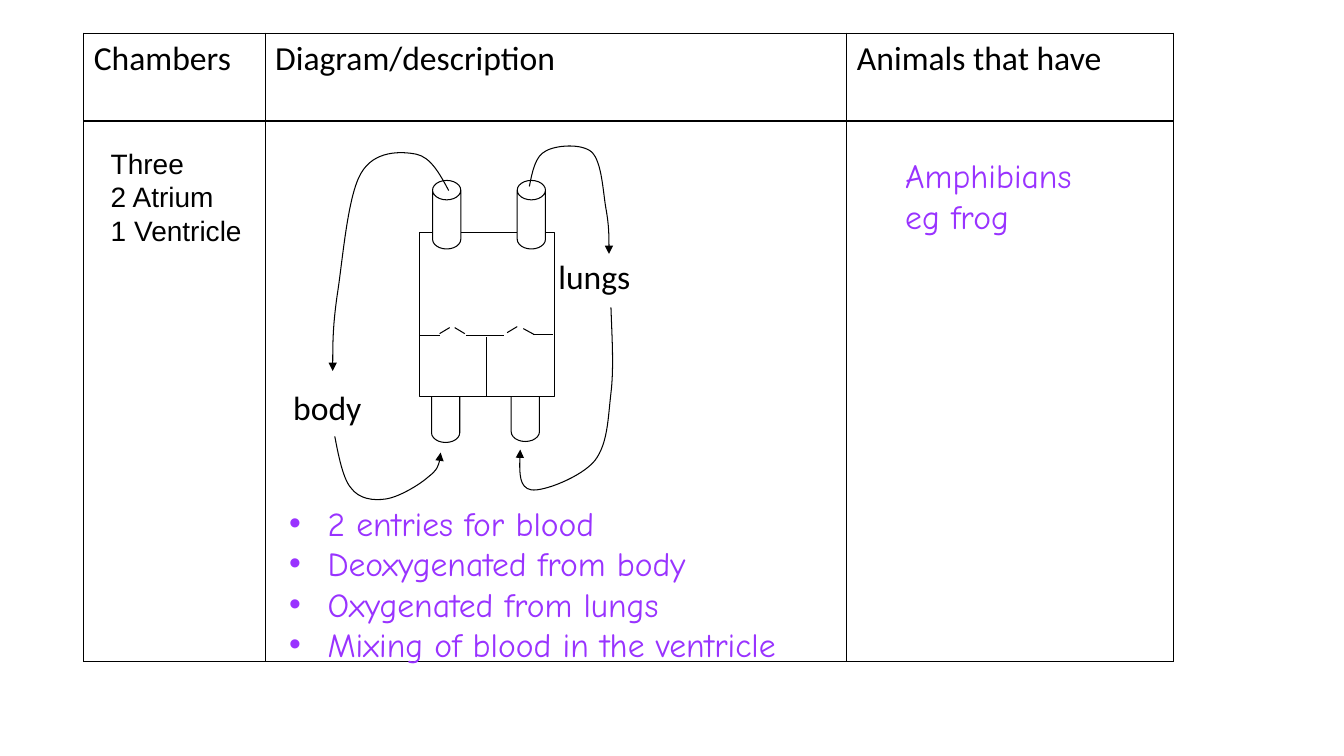
"""Slide on the three-chambered heart: a table with a circulation diagram and notes."""
from lxml.etree import SubElement
from pptx import Presentation
from pptx.dml.color import RGBColor
from pptx.enum.shapes import MSO_CONNECTOR as Connector, MSO_SHAPE as Shape
from pptx.oxml.ns import qn
from pptx.util import Inches, Pt

COLOURS = {"ink": "000000", "paper": "FFFFFF", "note": "9933FF"}
LABEL = {"name": "Calibri", "size": Pt(24)}
CHAMBER = {"name": "Arial", "size": Pt(20)}
NOTE = {"name": "Comic Neue", "size": Pt(24)}


def write(frame, lines, style, colour="ink", bullet=False, after=0):
    frame.text = "\n".join(lines)
    for paragraph in frame.paragraphs:
        if bullet:
            props = paragraph._p.get_or_add_pPr()
            props.set("marL", str(Inches(0.38)))
            props.set("indent", str(Inches(-0.38)))
            SubElement(props, qn("a:buFont"), typeface="Arial")
            SubElement(props, qn("a:buChar"), char="•")
        if after:
            paragraph.space_after = Pt(after)
        for run in paragraph.runs:
            for key, value in style.items():
                setattr(run.font, key, value)
            run.font.color.rgb = RGBColor.from_string(COLOURS[colour])


def outline(part):
    part.line.color.rgb = RGBColor.from_string(COLOURS["ink"])
    part.line.width = Pt(0.75)


deck = Presentation()
deck.slide_width, deck.slide_height = Inches(13.33), Inches(7.5)
slide = deck.slides.add_slide(deck.slide_layouts[6])
shapes = slide.shapes

table = shapes.add_table(2, 3, Inches(0.83), Inches(0.33), Inches(10.81), Inches(6.23)).table
table.first_row = table.horz_banding = False
for column, width in zip(table.columns, (1.8, 5.77, 3.24)):
    column.width = Inches(width)
for row, height in zip(table.rows, (0.87, 5.36)):
    row.height = Inches(height)
for cell, heading in zip(table.rows[0].cells, ("Chambers", "Diagram/description", "Animals that have")):
    write(cell.text_frame, [heading], LABEL)
for cell in table.iter_cells():
    props = cell._tc.get_or_add_tcPr()
    for side in ("lnL", "lnR", "lnT", "lnB"):
        border = SubElement(props, qn(f"a:{side}"), w=str(Pt(1)))
        SubElement(SubElement(border, qn("a:solidFill")), qn("a:srgbClr"), val=COLOURS["ink"])
    cell.fill.background()

heart_parts = [
    (Shape.CAN, 4.28, 3.71, 0.28, 0.68),
    (Shape.CAN, 5.07, 3.7, 0.28, 0.68),
    (Shape.FLOWCHART_PROCESS, 4.16, 2.31, 1.34, 1.62),
    (Shape.CAN, 4.29, 1.79, 0.28, 0.68),
    (Shape.CAN, 5.13, 1.79, 0.28, 0.68),
]
for kind, *place in heart_parts:
    part = shapes.add_shape(kind, *map(Inches, place))
    part.shadow.inherit = False
    part.fill.solid()
    part.fill.fore_color.rgb = RGBColor.from_string(COLOURS["paper"])
    outline(part)
    if kind == Shape.CAN:
        part.adjustments[0] = 0.688

walls_and_valves = [
    (4.83, 3.93, 4.83, 3.34),
    (4.62, 3.33, 5, 3.33),
    (4.36, 3.33, 4.16, 3.33),
    (5.48, 3.32, 5.29, 3.32),
    (4.36, 3.31, 4.46, 3.25),
    (5.03, 3.3, 5.13, 3.24),
    (5.3, 3.32, 5.19, 3.26),
    (4.61, 3.31, 4.51, 3.25),
]
for ends in walls_and_valves:
    wall = shapes.add_connector(Connector.STRAIGHT, *map(Inches, ends))
    outline(wall)
    SubElement(wall._element.spPr, qn("a:effectLst"))

blood_flows = [
    [(4.45, 1.89), (4.36, 1.72), (4.27, 1.56), (4.13, 1.53), (3.98, 1.5), (3.71, 1.49), (3.58, 1.72),
     (3.45, 1.94), (3.4, 2.56), (3.35, 2.89), (3.3, 3.22), (3.3, 3.45), (3.3, 3.68)],
    [(3.32, 4.33), (3.34, 4.42), (3.39, 4.74), (3.48, 4.84), (3.56, 4.95), (3.7, 4.97), (3.83, 4.95),
     (3.96, 4.93), (4.16, 4.81), (4.25, 4.73), (4.34, 4.66), (4.37, 4.57), (4.37, 4.49)],
    [(5.25, 1.85), (5.28, 1.7), (5.31, 1.55), (5.41, 1.5), (5.51, 1.44), (5.77, 1.42), (5.87, 1.51),
     (5.97, 1.61), (5.98, 1.9), (6.01, 2.07), (6.04, 2.24), (6.04, 2.38), (6.04, 2.52)],
    [(6.06, 3.05), (6.07, 3.35), (6.09, 3.65), (6.06, 3.9), (6.03, 4.15), (6.03, 4.4), (5.9, 4.57),
     (5.77, 4.73), (5.39, 4.88), (5.27, 4.86), (5.15, 4.84), (5.15, 4.65), (5.16, 4.46)],
]
for points in blood_flows:
    start, *rest = [(Inches(x), Inches(y)) for x, y in points]
    builder = shapes.build_freeform(*start)
    builder.add_line_segments(rest, close=False)
    flow = builder.convert_to_shape()
    flow.shadow.inherit = False
    flow.fill.background()
    outline(flow)
    SubElement(flow._element.spPr.get_or_add_ln(), qn("a:tailEnd"), type="triangle")
    segments = list(flow._element.iter(qn("a:lnTo")))
    for first in range(0, len(segments), 3):
        curve = SubElement(segments[first].getparent(), qn("a:cubicBezTo"))
        for segment in segments[first:first + 3]:
            curve.append(segment[0])
            segment.getparent().remove(segment)

captions = [
    ((1, 1.4, 1.77, 1.28), ["Three", "2 Atrium", "1 Ventricle"], CHAMBER, {}),
    ((2.81, 3.79, 1.43, 0.77), ["body"], LABEL, {"after": 10}),
    ((5.44, 2.49, 1.43, 0.77), ["lungs"], LABEL, {"after": 10}),
    ((2.77, 4.94, 5.61, 1.72),
     ["2 entries for blood", "Deoxygenated from body", "Oxygenated from lungs",
      "Mixing of blood in the ventricle"], NOTE, {"colour": "note", "bullet": True}),
    ((8.88, 1.49, 3.02, 0.91), ["Amphibians", "eg frog"], NOTE, {"colour": "note"}),
]
for place, lines, style, extras in captions:
    frame = shapes.add_textbox(*map(Inches, place)).text_frame
    frame.word_wrap = style is not CHAMBER
    write(frame, lines, style, **extras)

deck.save("out.pptx")
